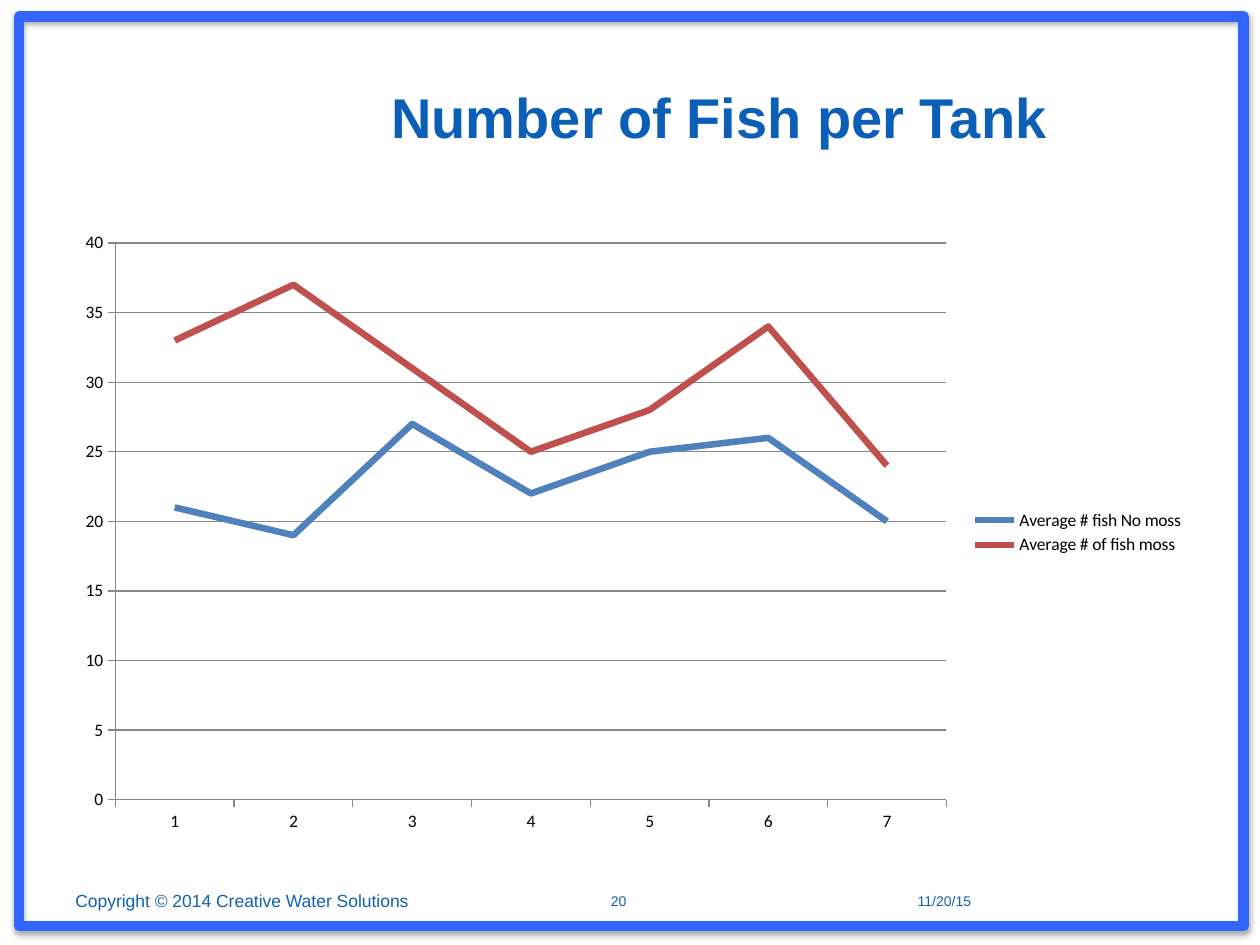
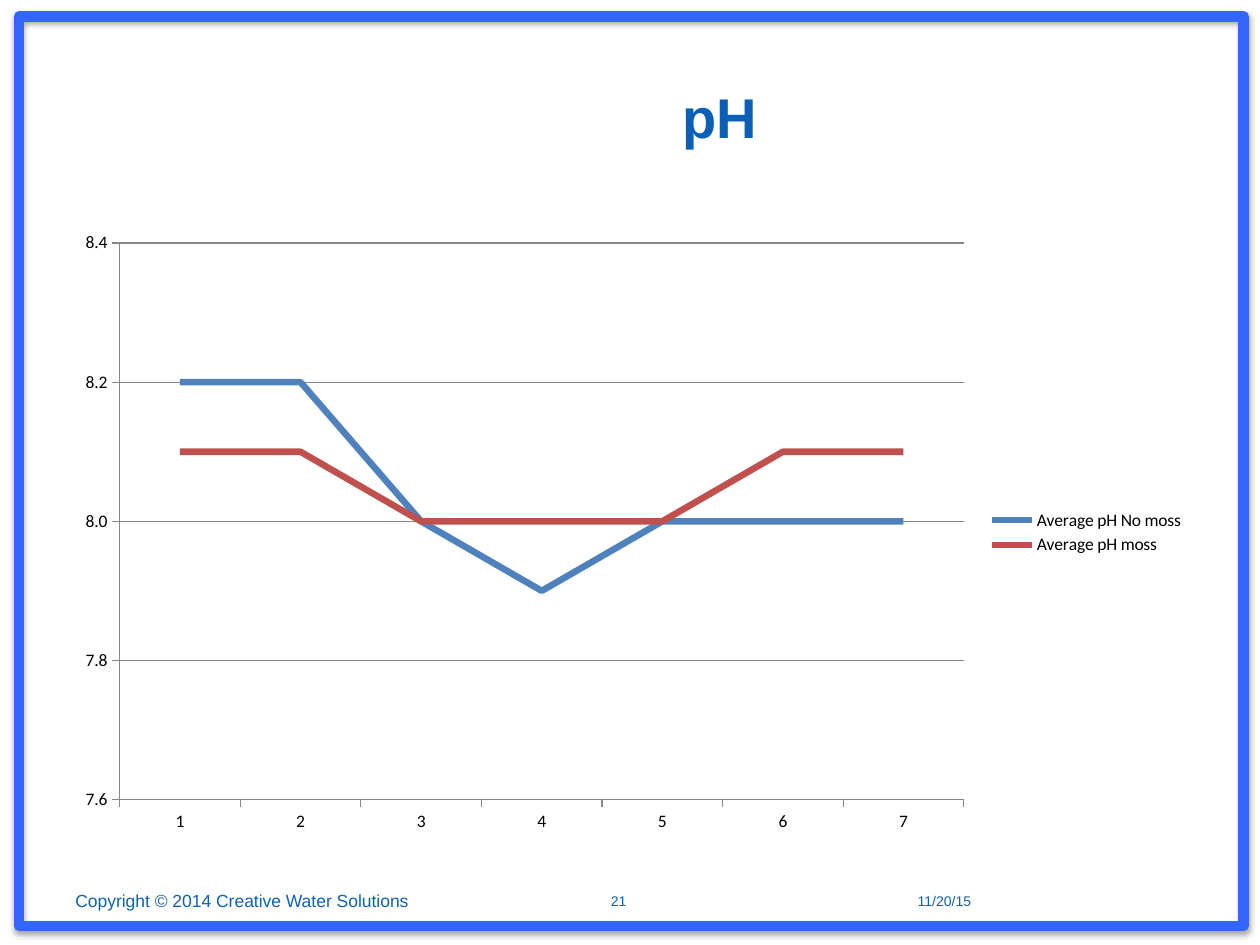
from lxml import etree
from pptx import Presentation
from pptx.chart.data import CategoryChartData
from pptx.dml.color import RGBColor
from pptx.enum.chart import XL_CHART_TYPE, XL_LEGEND_POSITION, XL_MARKER_STYLE, XL_TICK_MARK
from pptx.enum.shapes import MSO_SHAPE
from pptx.enum.text import MSO_ANCHOR, PP_ALIGN
from pptx.oxml import parse_xml
from pptx.oxml.ns import nsdecls, qn
from pptx.util import Cm, Pt

LINE_CHART = XL_CHART_TYPE.LINE
LEGEND_RIGHT = XL_LEGEND_POSITION.RIGHT
NO_MARKER = XL_MARKER_STYLE.NONE
TICK_OUT, TICK_NONE = XL_TICK_MARK.OUTSIDE, XL_TICK_MARK.NONE
RECTANGLE = MSO_SHAPE.RECTANGLE
MIDDLE = MSO_ANCHOR.MIDDLE
LEFT, CENTER = PP_ALIGN.LEFT, PP_ALIGN.CENTER

FRAME_BLUE, TITLE_BLUE, FOOTER_BLUE = "3366FF", "0B5FB7", "1061B1"
AXIS_GREY, BLACK = "868686", "000000"
SERIES_COLORS = ("4F81BD", "C0504D")

COPYRIGHT = "Copyright © 2014 Creative Water Solutions"
DATE = "11/20/15"
FOOTER_TOP, FOOTER_HEIGHT = 17.65, 1.02

SHADOW = (
    f'<a:effectLst {nsdecls("a")}>'
    '<a:outerShdw blurRad="40000" dist="23000" dir="5400000" rotWithShape="0">'
    '<a:srgbClr val="000000"><a:alpha val="35000"/></a:srgbClr>'
    "</a:outerShdw></a:effectLst>"
)

SLIDES = [
    {
        "title": "Number of Fish per Tank",
        "number": 20,
        "scale": {"minimum_scale": 0, "maximum_scale": 40, "major_unit": 5},
        "number_format": "0",
        "averages": {
            "Average # fish No moss": (21, 19, 27, 22, 25, 26, 20),
            "Average # of fish moss": (33, 37, 31, 25, 28, 34, 24),
        },
    },
    {
        "title": "pH",
        "number": 21,
        "scale": {"minimum_scale": 7.6, "maximum_scale": 8.4, "major_unit": 0.2},
        "number_format": "0.0",
        "averages": {
            "Average pH No moss": (8.2, 8.2, 8, 7.9, 8, 8, 8),
            "Average pH moss": (8.1, 8.1, 8, 8, 8, 8.1, 8.1),
        },
    },
]


def rgb(hex_color):
    return RGBColor.from_string(hex_color)


def apply(target, formats):
    for name, value in formats.items():
        setattr(target, name, value)


def place(left, top, width, height):
    return [Cm(length) for length in (left, top, width, height)]


class Deck:
    """Holds the shared style and the slide being built."""

    text_font = "Arial"
    chart_font = "Calibri"

    def __init__(self):
        self.presentation = Presentation()
        apply(self.presentation, {"slide_width": Cm(25.4), "slide_height": Cm(19.05)})
        self.slide = None

    def new_slide(self):
        blank = self.presentation.slide_layouts[6]
        self.slide = self.presentation.slides.add_slide(blank)

    def frame(self):
        border = self.slide.shapes.add_shape(RECTANGLE, *place(0.38, 0.33, 24.69, 18.34))
        border.fill.background()
        border.line.color.rgb = rgb(FRAME_BLUE)
        border.line.width = Pt(6)
        properties = border._element.spPr
        properties.find(qn("a:ln")).append(etree.Element(qn("a:round")))
        properties.append(parse_xml(SHADOW))

    def text(self, wording, box, size, color, bold=False, align=CENTER, side_margin=0.25):
        frame = self.slide.shapes.add_textbox(*place(*box)).text_frame
        apply(frame, {
            "word_wrap": True,
            "vertical_anchor": MIDDLE,
            "margin_left": Cm(side_margin),
            "margin_right": Cm(side_margin),
        })
        paragraph = frame.paragraphs[0]
        paragraph.text = wording
        paragraph.alignment = align
        font = paragraph.runs[0].font
        apply(font, {"name": self.text_font, "size": Pt(size), "bold": bold})
        font.color.rgb = rgb(color)

    def title(self, wording):
        self.text(wording, (4.88, 0.76, 19.25, 3.18), 32, TITLE_BLUE, bold=True, side_margin=0)

    def footer(self, number):
        for wording, left, width, size, align in (
            (DATE, 16.08, 5.92, 8, CENTER),
            (COPYRIGHT, 1.27, 7.82, 10, LEFT),
            (str(number), 11.43, 2.08, 8, CENTER),
        ):
            box = (left, FOOTER_TOP, width, FOOTER_HEIGHT)
            self.text(wording, box, size, FOOTER_BLUE, align=align)

    def line_chart(self, averages, scale, number_format):
        data = CategoryChartData(number_format=number_format)
        data.categories = [str(week) for week in range(1, 8)]
        for name, values in averages.items():
            data.add_series(name, values)
        chart = self.slide.shapes.add_chart(
            LINE_CHART, *place(1.27, 4.45, 22.86, 12.57), data).chart
        apply(chart, {"has_title": False, "has_legend": True})
        apply(chart.font, {"name": self.chart_font, "size": Pt(10)})
        chart.font.color.rgb = rgb(BLACK)
        apply(chart.legend, {"position": LEGEND_RIGHT, "include_in_layout": False})

        value_axis, category_axis = chart.value_axis, chart.category_axis
        apply(value_axis, {"has_major_gridlines": True, **scale})
        apply(value_axis.tick_labels,
              {"number_format": number_format, "number_format_is_linked": False})
        for axis in (value_axis, category_axis):
            apply(axis, {"major_tick_mark": TICK_OUT, "minor_tick_mark": TICK_NONE})
        for line in (value_axis.format.line, category_axis.format.line,
                     value_axis.major_gridlines.format.line):
            line.color.rgb = rgb(AXIS_GREY)
            line.width = Pt(0.75)

        plot = chart.plots[0]
        plot.vary_by_categories = False
        for series, color in zip(plot.series, SERIES_COLORS):
            series.smooth = False
            series.marker.style = NO_MARKER
            series.format.line.color.rgb = rgb(color)
            series.format.line.width = Pt(3.75)


def main():
    deck = Deck()
    for content in SLIDES:
        deck.new_slide()
        deck.frame()
        deck.title(content["title"])
        deck.footer(content["number"])
        deck.line_chart(content["averages"], content["scale"], content["number_format"])
    deck.presentation.save("out.pptx")


if __name__ == "__main__":
    main()
